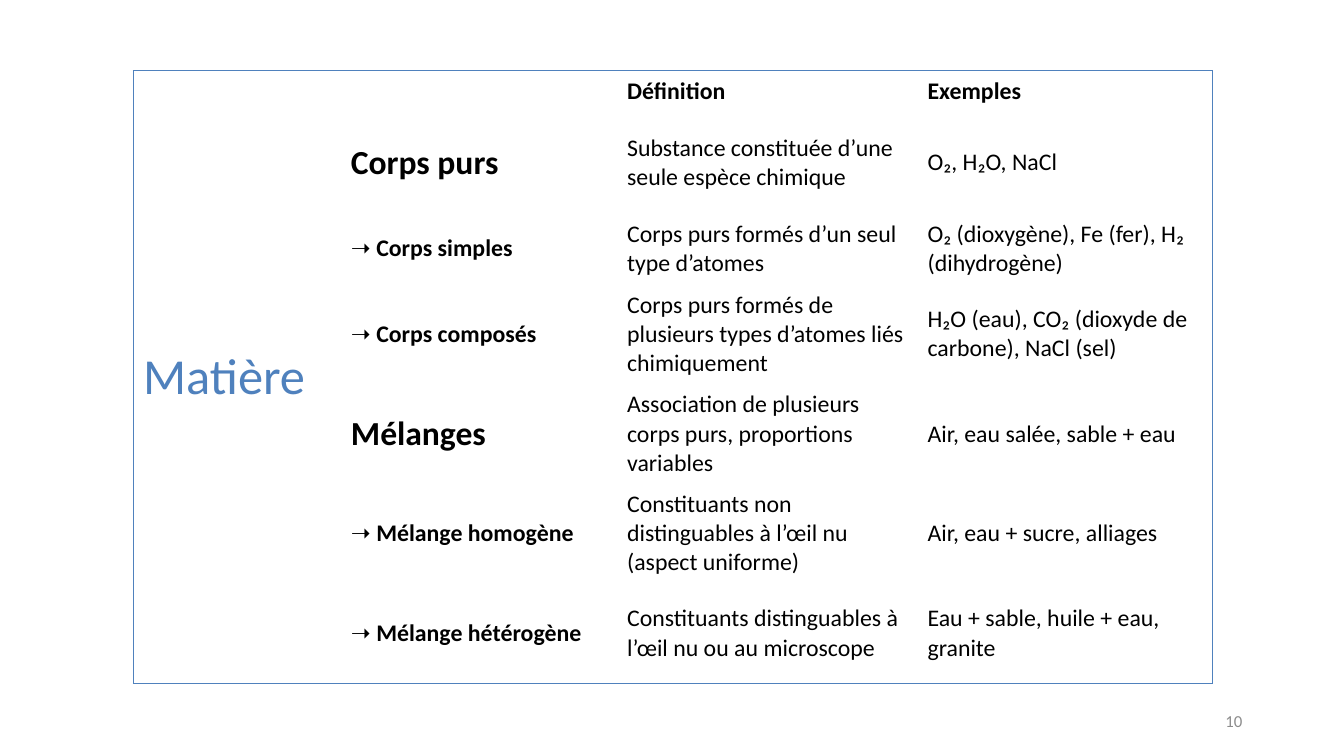
from lxml.etree import SubElement
from pptx import Presentation
from pptx.dml.color import RGBColor
from pptx.enum.text import MSO_ANCHOR as Anchor, PP_ALIGN as Align
from pptx.oxml.ns import qn
from pptx.util import Pt

PX = 9144
BLUE = "4F81BD"


def write(frame, text, size=17, color="000000", bold=False, align=Align.LEFT, after=0, lead=""):
    paragraph = frame.paragraphs[0]
    paragraph.alignment = align
    paragraph.space_after = Pt(after)
    for part, weight in ((lead, False), (text, bold)):
        if part:
            run = paragraph.add_run()
            run.text = part
            run.font.name = "Calibri"
            run.font.size = Pt(size)
            run.font.bold = weight
            run.font.color.rgb = RGBColor.from_string(color)


def outline(cell, sides):
    properties = cell._tc.get_or_add_tcPr()
    for side in "LRTB":
        line = SubElement(properties, qn(f"a:ln{side}"), w=str(Pt(0.5)))
        if side in sides:
            fill = SubElement(line, qn("a:solidFill"))
            SubElement(fill, qn("a:srgbClr"), val=BLUE)
        else:
            SubElement(line, qn("a:noFill"))


prs = Presentation()
prs.slide_width, prs.slide_height = 1333 * PX, 750 * PX
slide = prs.slides.add_slide(prs.slide_layouts[6])

page_number = slide.shapes.add_textbox(942 * PX, 695 * PX, 300 * PX, 40 * PX).text_frame
page_number.word_wrap = True
page_number.vertical_anchor = Anchor.MIDDLE
write(page_number, "10", size=12, color="8C8C8C", align=Align.RIGHT, after=6)

categories = [
    ("", "Définition", "Exemples"),
    ("Corps purs", "Substance constituée d’une seule espèce chimique", "O₂, H₂O, NaCl"),
    ("Corps simples", "Corps purs formés d’un seul type d’atomes",
     "O₂ (dioxygène), Fe (fer), H₂ (dihydrogène)"),
    ("Corps composés", "Corps purs formés de plusieurs types d’atomes liés chimiquement",
     "H₂O (eau), CO₂ (dioxyde de carbone), NaCl (sel)"),
    ("Mélanges", "Association de plusieurs corps purs, proportions variables",
     "Air, eau salée, sable + eau"),
    ("Mélange homogène", "Constituants non distinguables à l’œil nu (aspect uniforme)",
     "Air, eau + sucre, alliages"),
    ("Mélange hétérogène", "Constituants distinguables à l’œil nu ou au microscope",
     "Eau + sable, huile + eau, granite"),
]
main_categories = ("Corps purs", "Mélanges")
widths = [206, 274, 298, 292]
heights = [42, 99, 71, 99, 99, 99, 99]
last_row, last_col = len(heights) - 1, len(widths) - 1

matter = slide.shapes.add_table(
    len(heights), len(widths), 132 * PX, 70 * PX, sum(widths) * PX, sum(heights) * PX
).table
matter.first_row = matter.horz_banding = False
for column, width in zip(matter.columns, widths):
    column.width = width * PX
for row, height in zip(matter.rows, heights):
    row.height = height * PX

for r in range(len(heights)):
    for c in range(len(widths)):
        cell = matter.cell(r, c)
        edges = {"L": c == 0, "R": c == last_col, "T": r == 0, "B": r == last_row}
        if c == 0 and r == 0:
            edges["B"] = True
        outline(cell, [side for side, on in edges.items() if on])
        cell.fill.background()
        cell.vertical_anchor = Anchor.MIDDLE

matter.cell(0, 0).merge(matter.cell(last_row, 0))
write(matter.cell(0, 0).text_frame, "Matière", size=36, color=BLUE)

for r, texts in enumerate(categories):
    for c, text in enumerate(texts, 1):
        is_main = text in main_categories
        is_sub = c == 1 and r > 0 and not is_main
        write(matter.cell(r, c).text_frame, text, size=24 if is_main else 17,
              bold=r == 0 or c == 1, lead="➝ " if is_sub else "")

prs.save("out.pptx")
